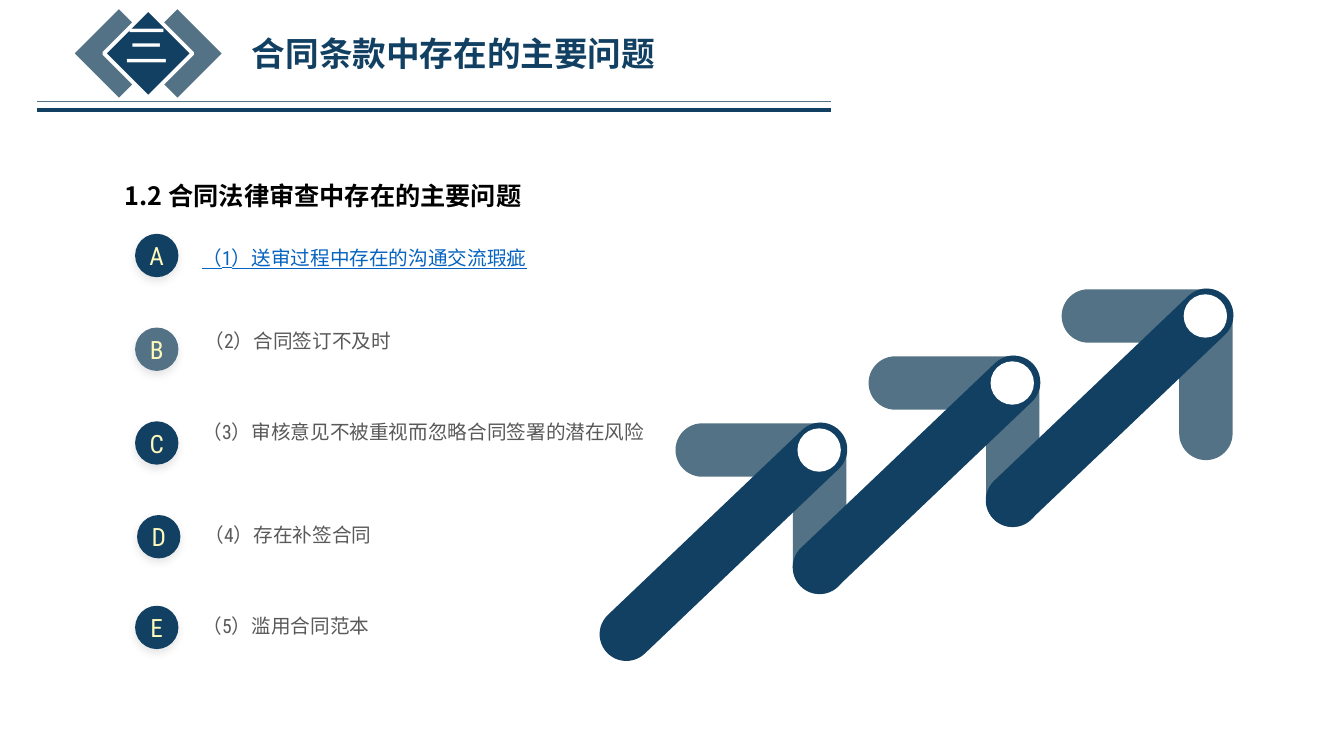
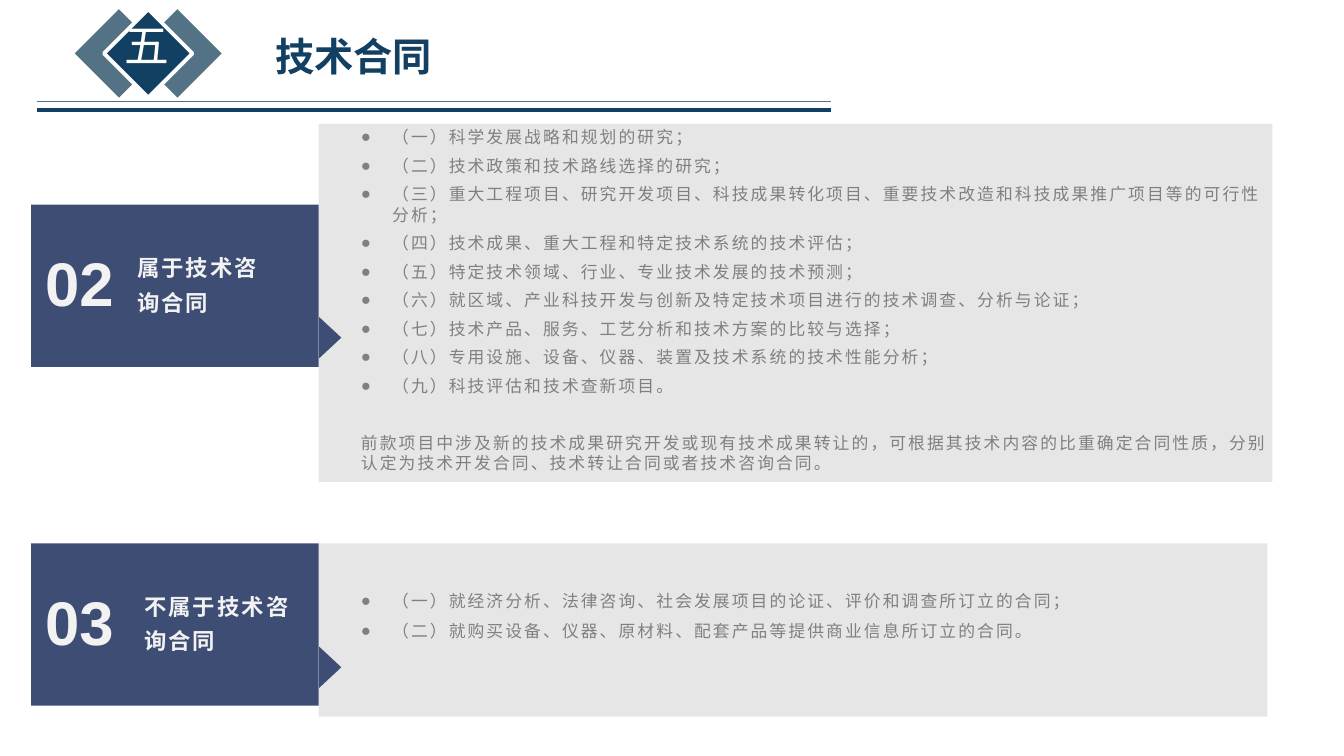
from lxml.etree import SubElement
from pptx import Presentation
from pptx.dml.color import RGBColor
from pptx.enum.shapes import MSO_CONNECTOR, MSO_SHAPE
from pptx.enum.text import MSO_ANCHOR, MSO_AUTO_SIZE, PP_ALIGN
from pptx.oxml.ns import qn
from pptx.util import Inches, Pt

NAVY = RGBColor(0x12, 0x40, 0x62)
SLATE = RGBColor(0x53, 0x72, 0x85)
INDIGO = RGBColor(0x3D, 0x4D, 0x73)
PALE = RGBColor(0xE7, 0xE6, 0xE6)
WHITE = RGBColor(0xFF, 0xFF, 0xFF)
BLACK = RGBColor(0x00, 0x00, 0x00)
CREAM = RGBColor(0xFE, 0xFA, 0xBC)
LINK_BLUE = RGBColor(0x05, 0x63, 0xC1)
DARK_GREY = RGBColor(0x59, 0x59, 0x59)
MID_GREY = RGBColor(0x80, 0x80, 0x80)
OFF_WHITE = RGBColor(0xF2, 0xF2, 0xF2)

CONDENSED = "Roboto Condensed"
HEADING = "Montserrat"
BODY = "Arial"
CHINESE = "Noto Sans CJK SC"


def add_block(slide, kind, left, top, width, height, fill, rotation=0):
    """Add a filled preset shape without outline or shadow."""
    shape = slide.shapes.add_shape(kind, Inches(left), Inches(top), Inches(width), Inches(height))
    shape.shadow.inherit = False
    shape.fill.solid()
    shape.fill.fore_color.rgb = fill
    shape.line.fill.background()
    shape.rotation = rotation
    return shape


def add_run(paragraph, text, font_name, size, color, bold=False, underline=False, spacing=0):
    """Add one styled run, with letter spacing in points."""
    run = paragraph.add_run()
    run.text = text
    run.font.name = font_name
    run.font.size = Pt(size)
    run.font.color.rgb = color
    run.font.bold = bold
    run.font.underline = underline
    properties = run._r.get_or_add_rPr()
    if spacing:
        properties.set("spc", str(int(spacing * 100)))
    if font_name == CHINESE:
        SubElement(properties, qn("a:ea"), typeface=font_name)


def add_frame(slide, left, top, width, height, wrap=True, inset=None, grow=True):
    """Add a text box and return its frame."""
    box = slide.shapes.add_textbox(Inches(left), Inches(top), Inches(width), Inches(height))
    frame = box.text_frame
    frame.word_wrap = wrap
    frame.auto_size = MSO_AUTO_SIZE.SHAPE_TO_FIT_TEXT if grow else MSO_AUTO_SIZE.NONE
    if inset is not None:
        set_insets(frame, inset)
    return frame


def set_insets(frame, inset):
    """Give a frame the same inset on all sides."""
    frame.margin_left = frame.margin_right = Inches(inset)
    frame.margin_top = frame.margin_bottom = Inches(inset)


def add_rule(slide, y, color, weight):
    """Draw a horizontal line under the title."""
    rule = slide.shapes.add_connector(
        MSO_CONNECTOR.STRAIGHT, Inches(0.37), Inches(y), Inches(8.24), Inches(y))
    rule.line.color.rgb = color
    rule.line.width = Pt(weight)
    SubElement(rule._element.spPr, qn("a:effectLst"))


def add_header(slide, numeral, title, left, top, width, height, size):
    """Draw the diamond badge, title and double rule."""
    for diamond_left, fill in ((1.45, SLATE), (0.87, SLATE), (1.16, NAVY)):
        diamond = add_block(slide, MSO_SHAPE.RECTANGLE, diamond_left, 0.22, 0.62, 0.62, fill, 45)
    diamond.line.color.rgb = WHITE
    diamond.line.width = Pt(2.75)
    badge = add_frame(slide, 1.14, 0.13, 0.65, 0.64, wrap=False)
    add_run(badge.paragraphs[0], numeral, CONDENSED, 32, WHITE)
    add_rule(slide, 1.01, SLATE, 1)
    add_rule(slide, 1.09, NAVY, 3)
    heading = add_frame(slide, left, top, width, height, wrap=False)
    add_run(heading.paragraphs[0], title, HEADING, size, NAVY, bold=True)


def add_arrow(slide, left, top):
    """Draw one rising arrow whose head starts at the given corner."""
    parts = (
        (0, 0, 1.7, SLATE, 0),
        (0.58, 0.58, 1.7, SLATE, 90),
        (-1.12, 0.91, 3.19, NAVY, 136.4),
    )
    for x, y, length, fill, rotation in parts:
        bar = add_block(slide, MSO_SHAPE.ROUNDED_RECTANGLE, left + x, top + y, length, 0.53, fill, rotation)
        bar.adjustments[0] = 0.5
    add_block(slide, MSO_SHAPE.OVAL, left + 1.21, top + 0.05, 0.43, 0.43, WHITE)


def add_floor_shadow(shape):
    """Give a shape a soft flattened shadow below it."""
    effects = shape._element.spPr.find(qn("a:effectLst"))
    shadow = SubElement(effects, qn("a:outerShdw"), blurRad="76200", dist="38100",
                        dir="5400000", sy="-20000", algn="bl", rotWithShape="0")
    color = SubElement(shadow, qn("a:srgbClr"), val="000000")
    SubElement(color, qn("a:alpha"), val="10000")


def add_item(slide, letter, fill, left, top, text, text_left, text_top, width, linked=False):
    """Draw a lettered circle and its line of text."""
    circle = add_block(slide, MSO_SHAPE.OVAL, left, top, 0.43, 0.43, fill)
    add_floor_shadow(circle)
    frame = circle.text_frame
    frame.word_wrap = False
    frame.vertical_anchor = MSO_ANCHOR.MIDDLE
    set_insets(frame, 0)
    frame.paragraphs[0].alignment = PP_ALIGN.CENTER
    add_run(frame.paragraphs[0], letter, CONDENSED, 18, CREAM)
    paragraph = add_frame(slide, text_left, text_top, width, 0.34).paragraphs[0]
    paragraph.line_spacing = Pt(17)
    add_run(paragraph, text, CONDENSED, 14, LINK_BLUE if linked else DARK_GREY, underline=linked)


def add_bullet(paragraph):
    """Give a paragraph a round bullet with a hanging indent."""
    properties = paragraph._p.get_or_add_pPr()
    properties.set("marL", str(Inches(0.31)))
    properties.set("indent", str(-Inches(0.31)))
    SubElement(properties, qn("a:buFont"), typeface=BODY)
    SubElement(properties, qn("a:buChar"), char="●")


def add_label(slide, top, number, title, title_left, title_width, arrow_drop):
    """Draw the numbered tab with its title and pointer."""
    left = 0.31
    add_block(slide, MSO_SHAPE.RECTANGLE, left, top, 2.85, 1.61, INDIGO)
    paragraph = add_frame(slide, left + title_left, top + 0.41, title_width, 0.7, inset=0).paragraphs[0]
    paragraph.line_spacing = 1.3
    paragraph.space_after = Pt(6)
    add_run(paragraph, title, BODY, 16, OFF_WHITE, bold=True, spacing=1.5)
    figure = add_frame(slide, left + 0.04, top + 0.35, 0.88, 0.84)
    add_run(figure.paragraphs[0], number, BODY, 44, OFF_WHITE, bold=True)
    add_block(slide, MSO_SHAPE.ISOSCELES_TRIANGLE, left + 2.76, top + arrow_drop, 0.41, 0.22, INDIGO, 90)


def add_panel(slide, box, text_box, items, line_spacing, space_after, closing=None):
    """Draw a grey panel with a bulleted list and an optional closing paragraph."""
    add_block(slide, MSO_SHAPE.RECTANGLE, *box, PALE)
    frame = add_frame(slide, *text_box, inset=0.03, grow=False)
    lines = items + [closing] if closing else items
    for index, text in enumerate(lines):
        paragraph = frame.add_paragraph() if index else frame.paragraphs[0]
        if text == closing:
            paragraph.space_before = Pt(20.4)
        else:
            add_bullet(paragraph)
        paragraph.line_spacing = line_spacing
        paragraph.space_after = Pt(space_after)
        add_run(paragraph, text, BODY, 12, MID_GREY, spacing=1.5)


def build_review_slide(slide):
    """Build the slide on problems in legal review."""
    for step in range(3):
        add_arrow(slide, 6.7 + 1.915 * step, 4.2 - 0.665 * step)
    add_header(slide, "三", "合同条款中存在的主要问题", 2.4, 0.28, 4.22, 0.5, 24)
    subtitle = add_frame(slide, 1.14, 1.74, 4.27, 0.4, wrap=False)
    add_run(subtitle.paragraphs[0], "1.2 合同法律审查中存在的主要问题", CHINESE, 18, BLACK, bold=True)
    items = (
        ("A", NAVY, 1.34, 2.32, "（1）送审过程中存在的沟通交流瑕疵", 1.91, 2.39, 3.49, True),
        ("B", SLATE, 1.34, 3.25, "（2）合同签订不及时", 1.93, 3.21, 3.49),
        ("C", NAVY, 1.34, 4.18, "（3）审核意见不被重视而忽略合同签署的潜在风险", 1.91, 4.11, 4.7),
        ("D", NAVY, 1.36, 5.11, "（4）存在补签合同", 1.93, 5.14, 3.24),
        ("E", NAVY, 1.34, 6.01, "（5）滥用合同范本", 1.91, 6.04, 3.24),
    )
    for item in items:
        add_item(slide, *item)


def build_consulting_slide(slide):
    """Build the slide on technical consulting contracts."""
    add_header(slide, "五", "技术合同", 2.63, 0.27, 1.77, 0.57, 28)
    included = [
        "（一）科学发展战略和规划的研究；",
        "（二）技术政策和技术路线选择的研究；",
        "（三）重大工程项目、研究开发项目、科技成果转化项目、重要技术改造和科技成果推广项目等的可行性分析；",
        "（四）技术成果、重大工程和特定技术系统的技术评估；",
        "（五）特定技术领域、行业、专业技术发展的技术预测；",
        "（六）就区域、产业科技开发与创新及特定技术项目进行的技术调查、分析与论证；",
        "（七）技术产品、服务、工艺分析和技术方案的比较与选择；",
        "（八）专用设施、设备、仪器、装置及技术系统的技术性能分析；",
        "（九）科技评估和技术查新项目。",
    ]
    closing = ("前款项目中涉及新的技术成果研究开发或现有技术成果转让的，可根据其技术内容的比重确定合同性质，"
               "分别认定为技术开发合同、技术转让合同或者技术咨询合同。")
    excluded = [
        "（一）就经济分析、法律咨询、社会发展项目的论证、评价和调查所订立的合同；",
        "（二）就购买设备、仪器、原材料、配套产品等提供商业信息所订立的合同。",
    ]
    add_panel(slide, (3.16, 1.23, 9.46, 3.55), (3.55, 1.23, 9.07, 3.7), included, 1.0, 6, closing)
    add_label(slide, 2.03, "02", "属于技术咨询合同", 1.05, 1.27, 1.21)
    add_panel(slide, (3.16, 5.39, 9.41, 1.72), (3.55, 5.73, 8.56, 0.88), excluded, 1.5, 0)
    add_label(slide, 5.39, "03", "不属于技术咨询合同", 1.12, 1.46, 1.12)


def main():
    """Build and save the presentation."""
    presentation = Presentation()
    presentation.slide_width = Inches(13.33)
    presentation.slide_height = Inches(7.5)
    for build in (build_review_slide, build_consulting_slide):
        build(presentation.slides.add_slide(presentation.slide_layouts[6]))
    presentation.save("out.pptx")


if __name__ == "__main__":
    main()
